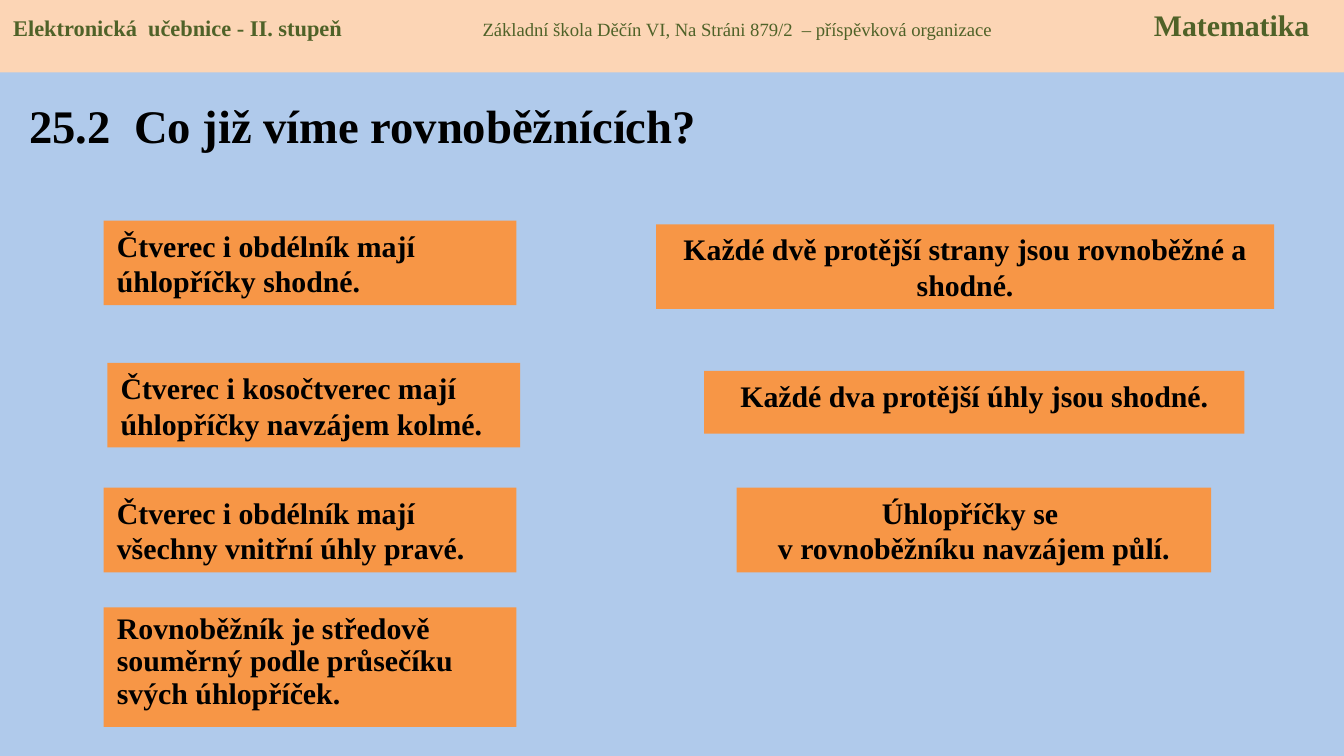
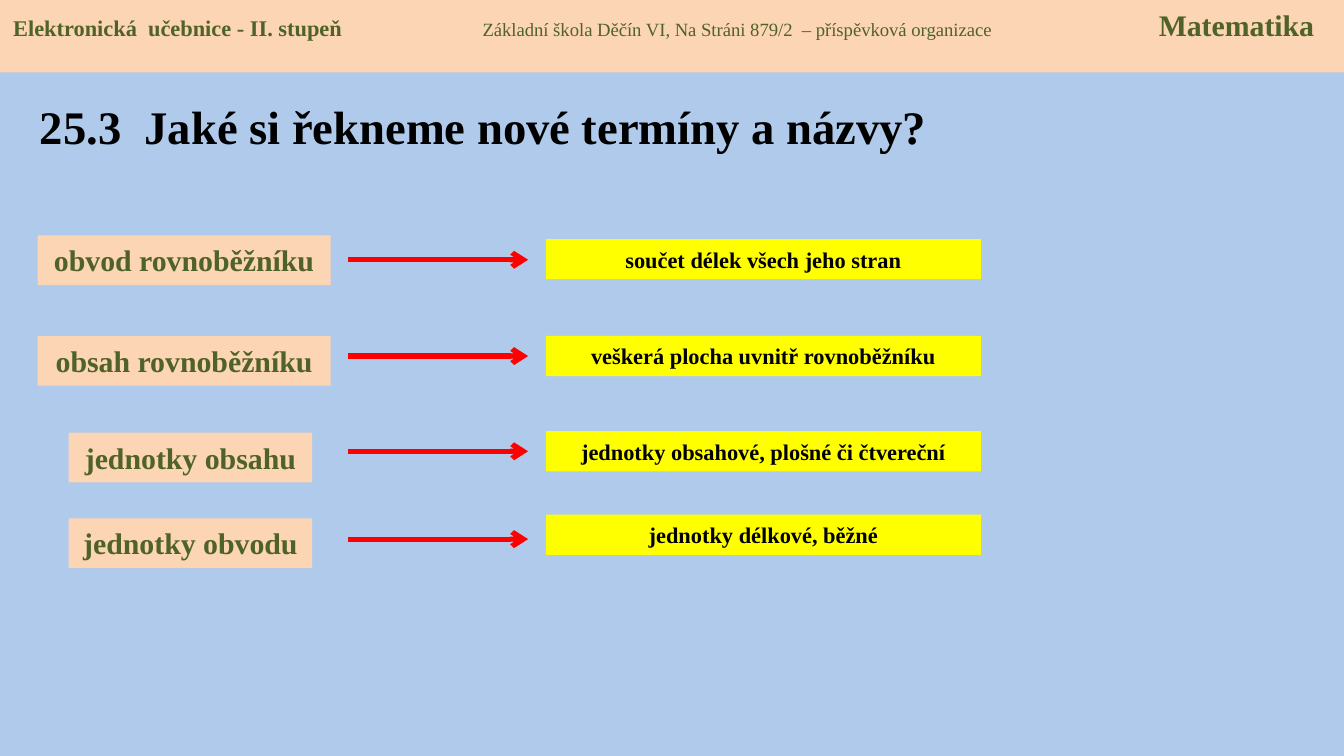
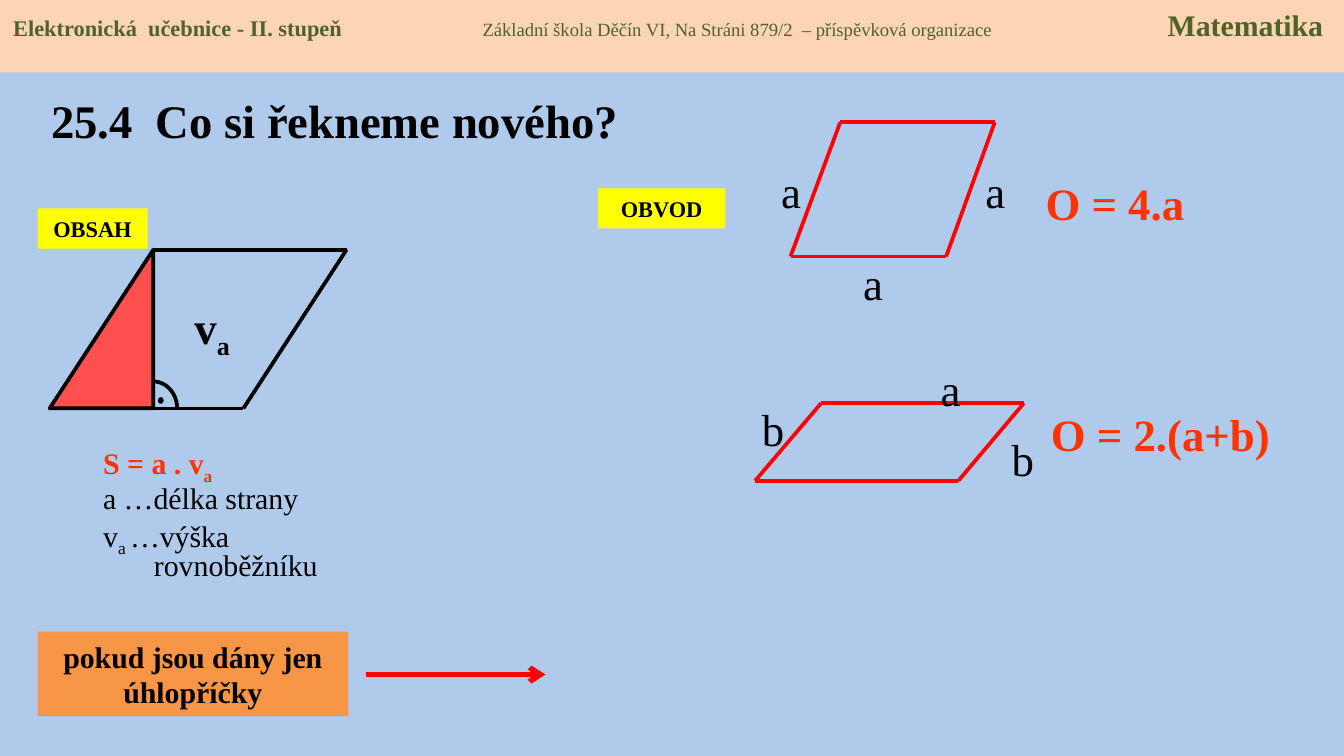
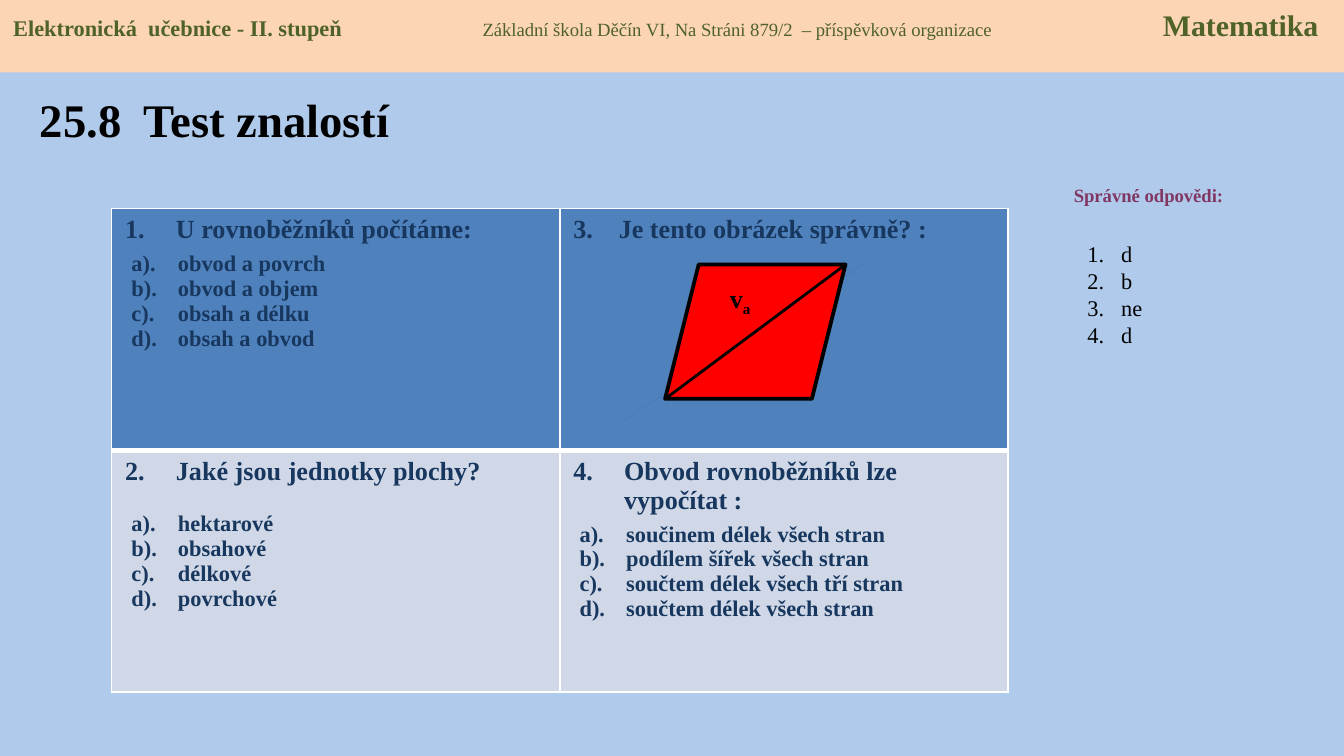
from lxml import etree
from pptx import Presentation
from pptx.dml.color import RGBColor
from pptx.enum.shapes import MSO_CONNECTOR, MSO_SHAPE
from pptx.enum.text import MSO_ANCHOR, MSO_AUTO_SIZE, PP_ALIGN
from pptx.oxml.ns import qn
from pptx.util import Cm, Pt

RECTANGLE = MSO_SHAPE.RECTANGLE
STRAIGHT = MSO_CONNECTOR.STRAIGHT
TOP, MIDDLE = MSO_ANCHOR.TOP, MSO_ANCHOR.MIDDLE
LEFT, CENTER = PP_ALIGN.LEFT, PP_ALIGN.CENTER
FIXED = MSO_AUTO_SIZE.NONE
TITLE_ONLY = 5
FONT = "Times New Roman"
COLORS = {
    "background": "B0CAEB",
    "band": "FCD5B5",
    "band_text": "4F6228",
    "card": "F79646",
    "label": "FFFF00",
    "black": "000000",
    "white": "FFFFFF",
    "red": "FF0000",
    "formula": "FF3300",
    "triangle": "FF5050",
    "question": "17375E",
    "question_top": "4F81BD",
    "question_bottom": "D0D8E8",
    "answers": "813763",
    "faint_line": "4B7EBC",
}


def rgb(name):
    return RGBColor.from_string(COLORS[name])


def style_run(run, size, color, bold):
    run.font.name = FONT
    run.font.size = Pt(size)
    run.font.bold = bold
    run.font.color.rgb = rgb(color)


def write(paragraph, parts, size, color="black", bold=False, align=LEFT):
    """Every second part is set as a subscript."""
    first, *rest = [parts] if isinstance(parts, str) else parts
    paragraph.text = first
    paragraph.alignment = align
    for index, part in enumerate(rest):
        run = paragraph.add_run()
        run.text = part
        if index % 2 == 0:
            run.font._element.set("baseline", "-25000")
    for run in paragraph.runs:
        style_run(run, size, color, bold)


def hang(paragraph, left, hanging, number=None):
    properties = paragraph._p.get_or_add_pPr()
    properties.set("marL", str(Cm(left)))
    properties.set("indent", str(-Cm(hanging)))
    if number:
        etree.SubElement(properties, qn("a:buAutoNum"),
                         type="arabicPeriod", startAt=str(number))


def next_paragraph(frame, index):
    return frame.add_paragraph() if index else frame.paragraphs[0]


def add_figure(slide, preset, box, fill=None, line=None, width=2):
    figure = slide.shapes.add_shape(preset, *map(Cm, box))
    figure.shadow.inherit = False
    if fill:
        figure.fill.solid()
        figure.fill.fore_color.rgb = rgb(fill)
    else:
        figure.fill.background()
    if line:
        figure.line.color.rgb = rgb(line)
        figure.line.width = Pt(width)
    else:
        figure.line.fill.background()
    return figure


def add_box(slide, box, parts, fill, size=16, color="black", align=CENTER):
    frame = add_figure(slide, RECTANGLE, box, fill).text_frame
    frame.vertical_anchor = TOP
    frame.word_wrap = True
    write(frame.paragraphs[0], parts, size, color, True, align)
    return frame


def add_text(slide, box, parts="", size=24, color="black", bold=False, align=CENTER):
    frame = slide.shapes.add_textbox(*map(Cm, box)).text_frame
    frame.word_wrap = True
    if parts:
        write(frame.paragraphs[0], parts, size, color, bold, align)
    return frame


def add_line(slide, start, end, color="red", width=2, arrow=False):
    line = slide.shapes.add_connector(STRAIGHT, *map(Cm, (*start, *end)))
    line.line.color.rgb = rgb(color)
    line.line.width = Pt(width)
    if arrow:
        etree.SubElement(line.line._get_or_add_ln(), qn("a:tailEnd"), type="arrow")
    etree.SubElement(line._element.spPr, qn("a:effectLst"))


def add_arrow(slide, left, y):
    add_line(slide, (left, y), (left + 3.4, y), width=2.75, arrow=True)


def add_outline(slide, corners, color="red"):
    for start, end in zip(corners, corners[1:] + corners[:1]):
        add_line(slide, start, end, color)


def add_band(slide, subject_left):
    band = add_figure(slide, RECTANGLE, (0, 0, 25.4, 1.37), "band")
    band.text_frame.vertical_anchor = TOP
    paragraph = band.text_frame.paragraphs[0]
    paragraph.alignment = LEFT
    for text, size, bold in (
        ("Elektronická  učebnice - II. stupeň\t", 12, True),
        ("Základní škola Děčín VI, Na Stráni 879/2  – příspěvková organizace\t", 10, False),
        ("Matematika", 16, True),
    ):
        run = paragraph.add_run()
        run.text = text
        style_run(run, size, "band_text", bold)
    tabs = etree.SubElement(paragraph._p.get_or_add_pPr(), qn("a:tabLst"))
    for position in (8.87, subject_left):
        etree.SubElement(tabs, qn("a:tab"), pos=str(Cm(position)), algn="l")


def new_slide(deck, title_text, title_box, subject_left):
    slide = deck.slides.add_slide(deck.slide_layouts[TITLE_ONLY])
    slide.background.fill.solid()
    slide.background.fill.fore_color.rgb = rgb("background")
    title = slide.shapes.title
    title.left, title.top, title.width, title.height = map(Cm, title_box)
    frame = title.text_frame
    frame.auto_size = FIXED
    frame.vertical_anchor = MIDDLE
    write(frame.paragraphs[0], title_text, 25, bold=True)
    add_band(slide, subject_left)
    return slide


def build_known_facts(deck):
    slide = new_slide(deck, "25.2  Co již víme rovnoběžnících?",
                      (0.3, 1.14, 16.41, 2.44), 21.56)
    for left, top, fact in (
        (1.96, 4.17, "Čtverec i obdélník mají úhlopříčky shodné."),
        (2.03, 6.86, "Čtverec i kosočtverec mají úhlopříčky navzájem kolmé."),
        (1.96, 9.22, "Čtverec i obdélník mají všechny vnitřní úhly pravé."),
    ):
        add_box(slide, (left, top, 7.8, 1.6), fact, "card", align=LEFT)
    symmetry = add_box(slide, (1.96, 11.48, 7.8, 2.26),
                       "Rovnoběžník je středově souměrný podle průsečíku svých úhlopříček.",
                       "card", align=LEFT)
    symmetry.paragraphs[0].line_spacing = 0.9
    for box, fact in (
        ((12.4, 4.24, 11.68, 1.6), "Každé dvě protější strany jsou rovnoběžné a shodné."),
        ((13.31, 7.01, 10.21, 1.19), "Každé dva protější úhly jsou shodné."),
        ((13.92, 9.22, 8.97, 1.6), "Úhlopříčky se \vv rovnoběžníku navzájem půlí."),
    ):
        add_box(slide, box, fact, "card")


def build_terms(deck):
    slide = new_slide(deck, "25.3  Jaké si řekneme nové termíny a názvy?",
                      (0.5, 1.55, 18.21, 1.65), 21.65)
    wide, narrow = (0.71, 5.54), (1.3, 4.6)
    for term, (left, width), term_top, meaning, meaning_top, arrow_y in (
        ("obvod rovnoběžníku", wide, 4.45, "součet délek všech jeho stran", 4.52, 4.91),
        ("obsah rovnoběžníku", wide, 6.35, "veškerá plocha uvnitř rovnoběžníku", 6.35, 6.73),
        ("jednotky obsahu", narrow, 8.18, "jednotky obsahové, plošné či čtvereční", 8.15, 8.53),
        ("jednotky obvodu", narrow, 9.8, "jednotky délkové, běžné", 9.73, 10.19),
    ):
        add_box(slide, (left, term_top, width, 0.94), term, "band", color="band_text")
        add_box(slide, (10.32, meaning_top, 8.22, 0.76), meaning, "label", 12)
        add_arrow(slide, 6.58, arrow_y)


def add_area_drawing(slide):
    add_outline(slide, [(2.9, 4.72), (6.55, 4.72), (4.6, 7.72), (2.9, 7.72)], "black")
    triangle = add_figure(slide, MSO_SHAPE.RIGHT_TRIANGLE, (0.94, 4.72, 1.96, 3),
                          "triangle", "black")
    triangle._element.spPr.get_or_add_xfrm().set("flipH", "1")
    add_figure(slide, MSO_SHAPE.ARC, (2.44, 7.21, 0.91, 1.02), line="black")
    add_figure(slide, MSO_SHAPE.OVAL, (3, 7.52, 0.08, 0.1), "black", "black", 0.75)
    add_text(slide, (3.3, 5.54, 1.42, 1.3), ("v", "a"), bold=True)


def build_formulas(deck):
    slide = new_slide(deck, "25.4  Co si řekneme nového?",
                      (0.71, 1.14, 13, 2.26), 21.82)
    add_box(slide, (0.71, 3.94, 2.08, 0.76), "OBSAH", "label", 12)
    add_box(slide, (11.3, 3.56, 2.41, 0.76), "OBVOD", "label", 12)
    add_area_drawing(slide)

    legend = add_text(slide, (1.7, 8.36, 5.77, 1.8))
    for index, (parts, color) in enumerate((
        (("S = a . v", "a"), "formula"),
        ("a …délka strany", "black"),
        (("v", "a ", "…výška rovnoběžníku"), "black"),
    )):
        paragraph = next_paragraph(legend, index)
        write(paragraph, parts, 16, color, bold=index == 0)
        paragraph.line_spacing = 0.8
        paragraph.space_before = Pt(3)
        hang(paragraph, 0.96, 0.96)

    add_outline(slide, [(14.94, 4.85), (17.88, 4.85), (18.8, 2.31), (15.88, 2.31)])
    add_outline(slide, [(14.27, 9.09), (18.11, 9.09), (19.35, 7.62), (15.52, 7.62)])
    for side, left, top, width in (
        ("a", 16.03, 4.7, 0.94), ("a", 18.34, 2.97, 0.94), ("a", 14.48, 2.97, 0.94),
        ("b", 18.87, 8.03, 0.74), ("a", 17.53, 6.71, 0.74), ("b", 14.15, 7.47, 0.74),
    ):
        add_text(slide, (left, top, width, 1.27), side)
    for left, top, formula in ((19.51, 3.2, "O = 4.a"), (19.61, 7.57, "O = 2.(a+b)")):
        add_text(slide, (left, top, 5.59, 1.27), formula, 24, "formula", True, LEFT)

    add_arrow(slide, 6.91, 12.75)
    add_box(slide, (0.71, 11.94, 5.87, 1.6), "pokud jsou dány jen úhlopříčky", "card")


def set_borders(cell, widths):
    properties = cell._tc.get_or_add_tcPr()
    for index, (side, width) in enumerate(zip(("lnL", "lnR", "lnT", "lnB"), widths)):
        border = etree.Element(qn("a:" + side), w=str(Pt(width)))
        fill = etree.SubElement(border, qn("a:solidFill"))
        etree.SubElement(fill, qn("a:srgbClr"), val=COLORS["white"])
        properties.insert(index, border)


def fill_question(cell, number, question, options, gap):
    heading = cell.text_frame.paragraphs[0]
    if options:
        write(heading, question, 14, "question", True)
        hang(heading, 0.96, 0.96, number)
    else:
        write(heading, f"{number}.\t{question}", 14, "question", True)
        hang(heading, 0.86, 0.86)
    for letter, option in zip("abcd", options):
        paragraph = cell.text_frame.add_paragraph()
        write(paragraph, f"{letter}).\t{option}", 12, "question", True)
        hang(paragraph, 1, 0.88)
        if letter == "a":
            paragraph.space_before = Pt(gap)


def add_questions(slide):
    questions = (
        (1, "U rovnoběžníků počítáme:",
         ("obvod a povrch", "obvod a objem", "obsah a délku", "obsah a obvod"), 4),
        (3, "Je tento obrázek správně? :", (), 0),
        (2, "Jaké jsou jednotky plochy?",
         ("hektarové", "obsahové", "délkové", "povrchové"), 14),
        (4, "Obvod rovnoběžníků lze vypočítat :",
         ("součinem délek všech stran", "podílem šířek všech stran",
          "součtem délek všech tří stran", "součtem délek všech stran"), 4),
    )
    grid = slide.shapes.add_table(2, 2, *map(Cm, (2.11, 3.94, 16.94, 9.14))).table
    grid.horz_banding = False
    for index, question in enumerate(questions):
        row, column = divmod(index, 2)
        cell = grid.cell(row, column)
        fill_question(cell, *question)
        cell.fill.solid()
        cell.fill.fore_color.rgb = rgb("question_bottom" if row else "question_top")
        set_borders(cell, (1, 1, 1, 1) if row else (1, 1, 1, 3))
        if row:
            cell._tc.tcPr.find(qn("a:lnT")).set("w", str(Pt(3)))


def build_test(deck):
    slide = new_slide(deck, "25.8  Test znalostí", (0.5, 1.14, 8.1, 2.21), 21.73)
    add_text(slide, (19.71, 3.35, 3.99, 0.69), "Správné odpovědi:", 10, "answers", True)
    add_questions(slide)
    answers = add_text(slide, (20.3, 4.42, 4.19, 2.84))
    for index, answer in enumerate(("d", "b", "ne", "d")):
        paragraph = next_paragraph(answers, index)
        write(paragraph, answer, 12)
        hang(paragraph, 0.64, 0.64, 1)
    add_line(slide, (11.71, 8), (16.31, 5), "faint_line", 0.75)
    add_figure(slide, MSO_SHAPE.PARALLELOGRAM, (12.57, 5, 3.41, 2.54), "red", "black")
    add_line(slide, (12.57, 7.54), (15.98, 5), "black", 1.5)
    add_text(slide, (13.28, 5.21, 1.42, 0.86), ("v", "a"), 14, bold=True)


def main():
    deck = Presentation()
    deck.slide_width, deck.slide_height = Cm(25.4), Cm(14.29)
    build_known_facts(deck)
    build_terms(deck)
    build_formulas(deck)
    build_test(deck)
    deck.save("out.pptx")


if __name__ == "__main__":
    main()
